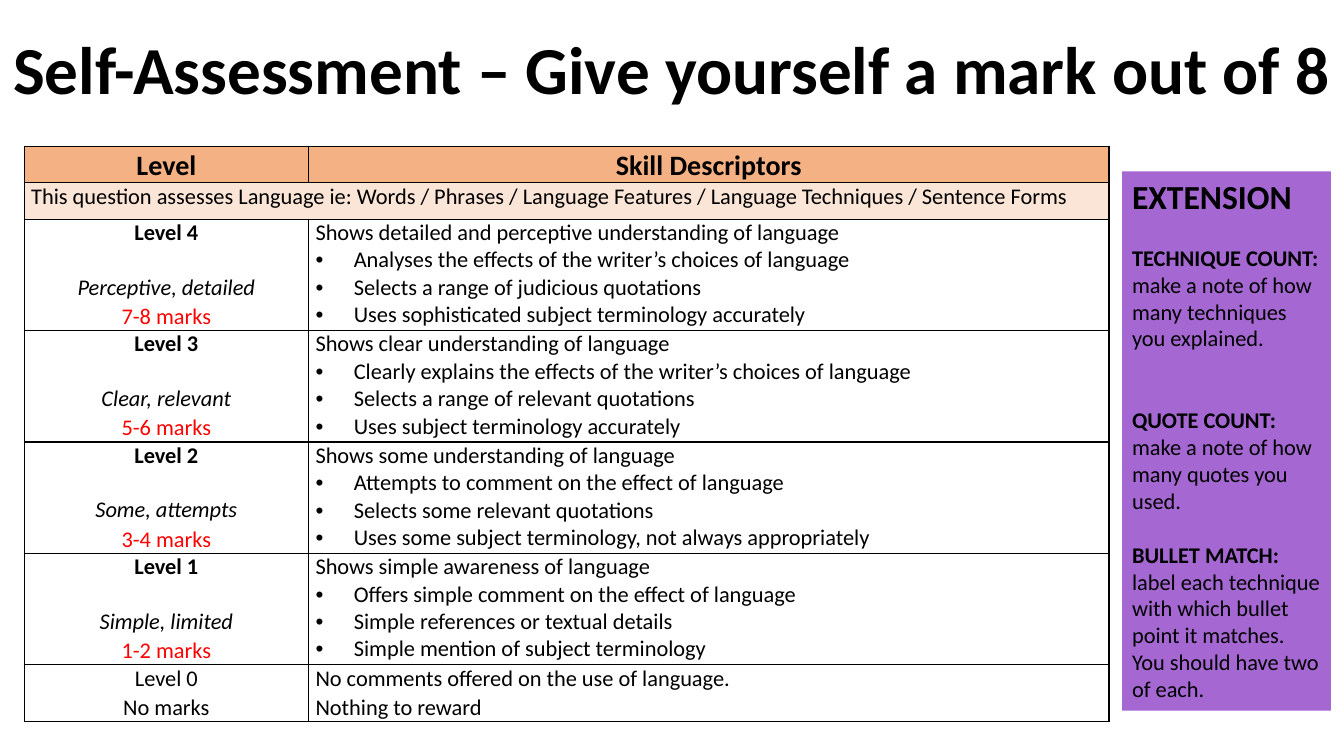
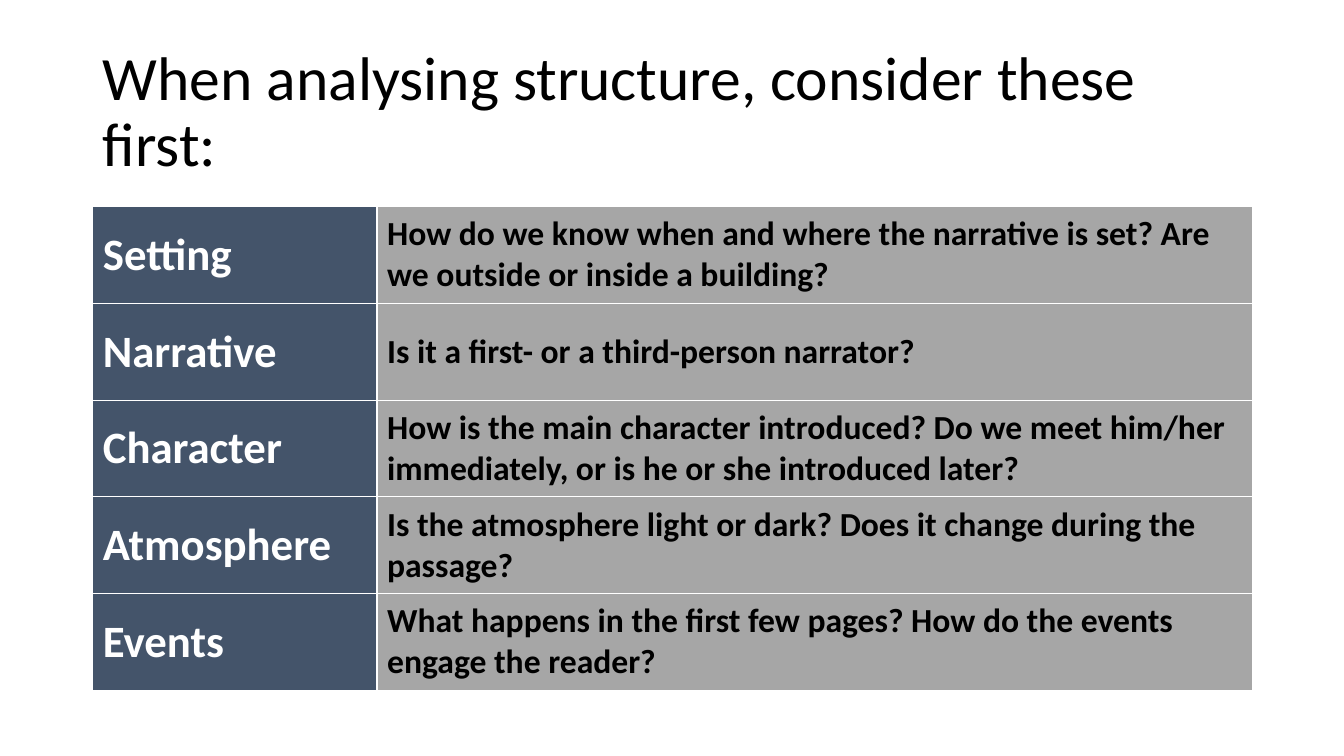
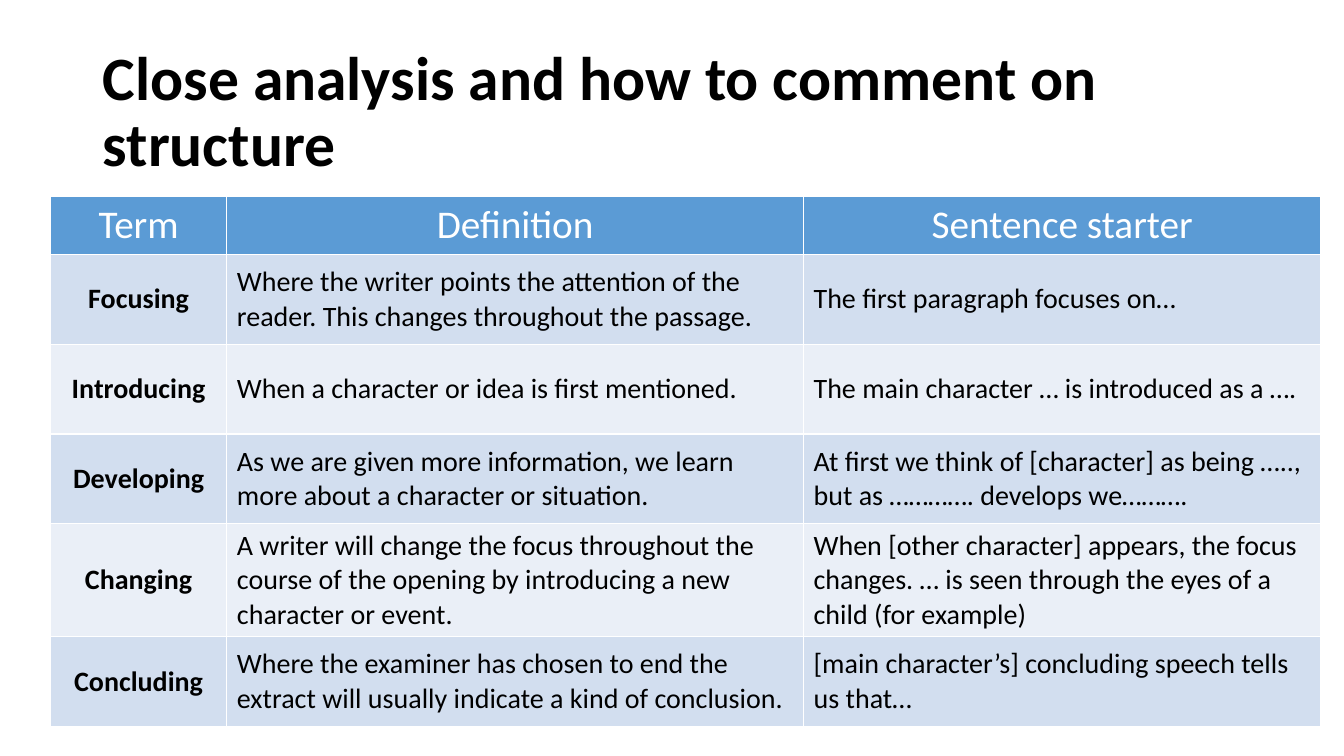
from dataclasses import dataclass
from typing import Optional, Sequence

import pptx
import pptx.dml.color
import pptx.enum.shapes
import pptx.enum.text
import pptx.oxml.ns
import pptx.util
from lxml import etree
from pptx.util import Inches

FONT = "Calibri"
BLACK, WHITE, RED = "000000", "FFFFFF", "FF0000"
ORANGE, PALE_ORANGE, PURPLE = "F4B183", "FBE5D6", "A568D2"
SLATE, GREY = "44546A", "A6A6A6"
BLUE, BANDS = "5B9BD5", ("D2DEEF", "EAEFF7")
BLANK_LINE = 19.5  # points, one line of 16 pt text

ALIGN = pptx.enum.text.PP_ALIGN
ANCHOR = pptx.enum.text.MSO_ANCHOR
TITLE_BOX = (0.92, 0.4, 11.5, 1.45)
WIDE_MARGINS, TIGHT_MARGINS = (0.1, 0.05), (0.07, 0)


@dataclass(frozen=True)
class Para:
    """One paragraph; lead is a bold opening before the plain text."""
    text: str
    size: float = 16
    bold: bool = False
    italic: bool = False
    color: str = BLACK
    centred: bool = False
    spacing: float = 1.0
    before: float = 0
    bullet: bool = False
    lead: str = ""


@dataclass(frozen=True)
class Cell:
    paras: Sequence[Para]
    fill: str


@dataclass(frozen=True)
class Grid:
    left: float
    top: float
    cols: Sequence[float]
    rows: Sequence[float]
    margins: tuple[float, float]
    anchor: ANCHOR
    border: str


@dataclass(frozen=True)
class Level:
    name: str
    summary: str
    marks: str
    descriptor: str
    skills: Sequence[str]


LEVELS = [
    Level("Level 4", "Perceptive, detailed", "7-8 marks",
          "Shows detailed and perceptive understanding of language",
          ["Analyses the effects of the writer’s choices of language",
           "Selects a range of judicious quotations",
           "Uses sophisticated subject terminology accurately"]),
    Level("Level 3", "Clear, relevant", "5-6 marks",
          "Shows clear understanding of language",
          ["Clearly explains the effects of the writer’s choices of language",
           "Selects a range of relevant quotations",
           "Uses subject terminology accurately"]),
    Level("Level 2", "Some, attempts", "3-4 marks",
          "Shows some understanding of language",
          ["Attempts to comment on the effect of language",
           "Selects some relevant quotations",
           "Uses some subject terminology, not always appropriately"]),
    Level("Level 1", "Simple, limited", "1-2 marks",
          "Shows simple awareness of language",
          ["Offers simple comment on the effect of language",
           "Simple references or textual details",
           "Simple mention of subject terminology"]),
]

EXTENSION = [
    Para("EXTENSION", 24, bold=True),
    Para("make a note of how many techniques you explained.",
         lead="TECHNIQUE COUNT: ", before=BLANK_LINE),
    Para("make a note of how many quotes you used.",
         lead="QUOTE COUNT: ", before=2 * BLANK_LINE),
    Para("label each technique with which bullet point it matches. "
         "You should have two of each.",
         lead="BULLET MATCH: ", before=BLANK_LINE),
]

QUESTIONS = [
    ("Setting", "How do we know when and where the narrative is set? "
                "Are we outside or inside a building?"),
    ("Narrative", "Is it a first- or a third-person narrator?"),
    ("Character", "How is the main character introduced? Do we meet him/her "
                  "immediately, or is he or she introduced later?"),
    ("Atmosphere", "Is the atmosphere light or dark? "
                   "Does it change during the passage?"),
    ("Events", "What happens in the first few pages? "
               "How do the events engage the reader?"),
]

TERMS = [
    ("Focusing",
     "Where the writer points the attention of the reader. "
     "This changes throughout the passage.",
     "The first paragraph focuses on…"),
    ("Introducing",
     "When a character or idea is first mentioned.",
     "The main character … is introduced as a …."),
    ("Developing",
     "As we are given more information, we learn more about a character "
     "or situation.",
     "At first we think of [character] as being ….., "
     "but as …………. develops we………."),
    ("Changing",
     "A writer will change the focus throughout the course of the opening "
     "by introducing a new character or event.",
     "When [other character] appears, the focus changes. "
     "… is seen through the eyes of a child (for example)"),
    ("Concluding",
     "Where the examiner has chosen to end the extract will usually "
     "indicate a kind of conclusion.",
     "[main character’s] concluding speech tells us that…"),
]


def rgb(color: str) -> pptx.dml.color.RGBColor:
    return pptx.dml.color.RGBColor.from_string(color)


def sub(parent, tag: str, **attrs: str):
    return etree.SubElement(parent, pptx.oxml.ns.qn(tag), attrs)


def add_bullet(p) -> None:
    pPr = p._p.get_or_add_pPr()
    indent = Inches(0.38)
    pPr.set("marL", str(indent))
    pPr.set("indent", str(-indent))
    sub(pPr, "a:buFont", typeface="Arial")
    sub(pPr, "a:buChar", char="•")


def write(tf, paras: Sequence[Para]) -> None:
    """Fill an empty text frame with paragraphs."""
    tf.word_wrap = True
    for i, para in enumerate(paras):
        p = tf.add_paragraph() if i else tf.paragraphs[0]
        p.alignment = ALIGN.CENTER if para.centred else ALIGN.LEFT
        p.line_spacing = para.spacing
        p.space_before = pptx.util.Pt(para.before)
        p.font.name = FONT
        p.font.size = pptx.util.Pt(para.size)
        p.font.bold = para.bold
        p.font.italic = para.italic
        p.font.color.rgb = rgb(para.color)
        if para.bullet:
            add_bullet(p)
        if para.lead:
            r = p.add_run()
            r.text = para.lead
            r.font.bold = True
        p.add_run().text = para.text


def add_titled_slide(prs, title: Para,
                     box: tuple[float, float, float, float] = TITLE_BOX):
    s = prs.slides.add_slide(prs.slide_layouts[5])
    sp = s.shapes.title
    sp.left, sp.top, sp.width, sp.height = map(Inches, box)
    tf = sp.text_frame
    tf.auto_size = pptx.enum.text.MSO_AUTO_SIZE.NONE
    tf.vertical_anchor = ANCHOR.MIDDLE
    write(tf, [title])
    return s


def set_borders(cell, color: str) -> None:
    tcPr = cell._tc.get_or_add_tcPr()
    for side in ("a:lnL", "a:lnR", "a:lnT", "a:lnB"):
        ln = sub(tcPr, side, w=str(pptx.util.Pt(1)))
        sub(sub(ln, "a:solidFill"), "a:srgbClr", val=color)


def add_grid(s, grid: Grid, rows: Sequence[Sequence[Optional[Cell]]]) -> None:
    """Draw a table; None joins a cell to the one on its left."""
    frame = s.shapes.add_table(
        len(grid.rows), len(grid.cols), Inches(grid.left), Inches(grid.top),
        Inches(sum(grid.cols)), Inches(sum(grid.rows)))
    table = frame.table
    table.first_row = table.horz_banding = False
    for col, width in zip(table.columns, grid.cols):
        col.width = Inches(width)
    for row, height in zip(table.rows, grid.rows):
        row.height = Inches(height)
    for i, row in enumerate(rows):
        for j, content in enumerate(row):
            cell = table.cell(i, j)
            set_borders(cell, grid.border)
            if content is None:
                table.cell(i, j - 1).merge(cell)
                continue
            cell.fill.solid()
            cell.fill.fore_color.rgb = rgb(content.fill)
            cell.margin_left = cell.margin_right = Inches(grid.margins[0])
            cell.margin_top = cell.margin_bottom = Inches(grid.margins[1])
            cell.vertical_anchor = grid.anchor
            write(cell.text_frame, content.paras)


def level_row(level: Level) -> list[Cell]:
    return [
        Cell([Para(level.name, bold=True, centred=True),
              Para(level.summary, italic=True, centred=True,
                   before=BLANK_LINE),
              Para(level.marks, color=RED, centred=True, spacing=1.07)],
             WHITE),
        Cell([Para(level.descriptor),
              *(Para(skill, bullet=True) for skill in level.skills)], WHITE),
    ]


def add_extension_panel(s) -> None:
    sp = s.shapes.add_shape(
        pptx.enum.shapes.MSO_SHAPE.RECTANGLE,
        Inches(11.13), Inches(1.7), Inches(2.07), Inches(5.35))
    sp.shadow.inherit = False
    sp.fill.solid()
    sp.fill.fore_color.rgb = rgb(PURPLE)
    sp.line.fill.background()
    sp.text_frame.vertical_anchor = ANCHOR.TOP
    write(sp.text_frame, EXTENSION)


def self_assessment_slide(prs) -> None:
    s = add_titled_slide(
        prs, Para("Self-Assessment – Give yourself a mark out of 8", 48,
                  bold=True, centred=True, spacing=0.9),
        (0, 0, 13.33, 1.45))
    header = [Cell([Para(text, 20, bold=True, centred=True, spacing=1.07)],
                   ORANGE) for text in ("Level", "Skill Descriptors")]
    focus = Cell([Para("This question assesses Language ie: Words / Phrases / "
                       "Language Features / Language Techniques / "
                       "Sentence Forms")], PALE_ORANGE)
    level_zero = [
        Cell([Para("Level 0", centred=True),
              Para("No marks", centred=True, spacing=1.07)], WHITE),
        Cell([Para("No comments offered on the use of language."),
              Para("Nothing to reward", spacing=1.07)], WHITE),
    ]
    grid = Grid(0.24, 1.45, [2.82, 7.94],
                [0.36, 0.36, *[1.1] * len(LEVELS), 0.55],
                TIGHT_MARGINS, ANCHOR.TOP, BLACK)
    add_grid(s, grid, [header, [focus, None], *map(level_row, LEVELS),
                       level_zero])
    add_extension_panel(s)


def structure_questions_slide(prs) -> None:
    s = add_titled_slide(
        prs, Para("When analysing structure, consider these first:", 44,
                  spacing=0.9))
    grid = Grid(0.92, 2.05, [2.82, 8.68], [0.96] * len(QUESTIONS),
                WIDE_MARGINS, ANCHOR.MIDDLE, WHITE)
    add_grid(s, grid, [
        [Cell([Para(topic, 32, bold=True, color=WHITE)], SLATE),
         Cell([Para(question, 24, bold=True)], GREY)]
        for topic, question in QUESTIONS])


def close_analysis_slide(prs) -> None:
    s = add_titled_slide(
        prs, Para("Close analysis and how to comment on structure", 44,
                  bold=True, spacing=0.9))
    header = [Cell([Para(text, 28, color=WHITE, centred=True)], BLUE)
              for text in ("Term", "Definition", "Sentence starter")]
    body = [
        [Cell([Para(text, 20, bold=j == 0, centred=j == 0)],
              BANDS[i % len(BANDS)]) for j, text in enumerate(term)]
        for i, term in enumerate(TERMS)]
    grid = Grid(0.5, 1.95, [1.75, 5.72, 5.13],
                [0.57, 0.89, 0.89, 0.89, 1.12, 0.89],
                WIDE_MARGINS, ANCHOR.MIDDLE, WHITE)
    add_grid(s, grid, [header, *body])


def main() -> None:
    prs = pptx.Presentation()
    prs.slide_width, prs.slide_height = Inches(13.33), Inches(7.5)
    self_assessment_slide(prs)
    structure_questions_slide(prs)
    close_analysis_slide(prs)
    prs.save("out.pptx")


if __name__ == "__main__":
    main()
